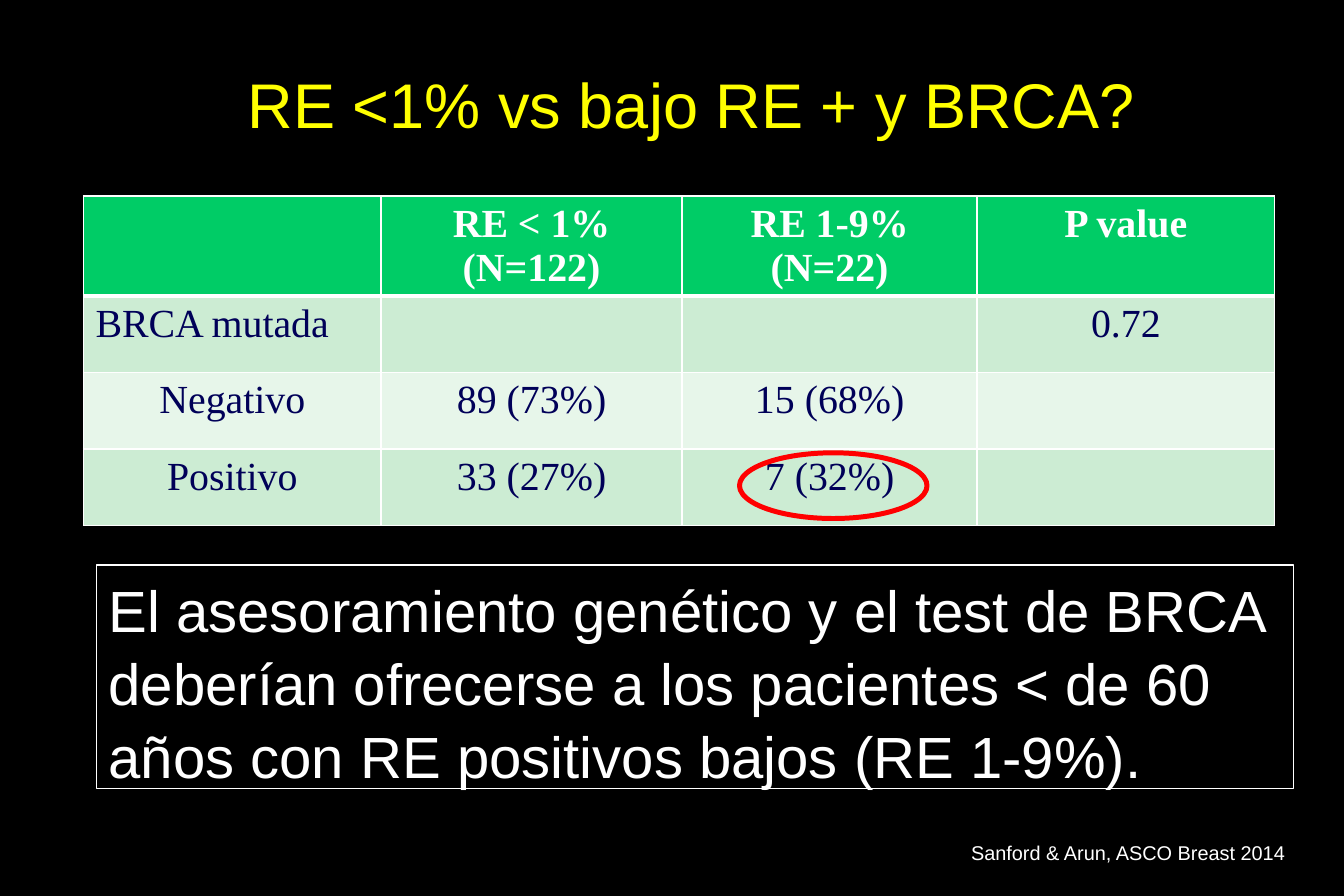
from dataclasses import dataclass

from lxml.etree import SubElement
from pptx import Presentation
from pptx.dml.color import RGBColor
from pptx.enum.shapes import MSO_SHAPE
from pptx.enum.text import MSO_ANCHOR, MSO_AUTO_SIZE, PP_ALIGN
from pptx.oxml import parse_xml
from pptx.oxml.ns import nsdecls, qn
from pptx.slide import Slide
from pptx.table import _Cell
from pptx.text.text import TextFrame
from pptx.util import Inches, Pt

COLOURS = {
    "background": "000000",
    "title": "FFFF00",
    "white": "FFFFFF",
    "header": "00CC66",
    "odd row": "CCECD3",
    "even row": "E7F6EA",
    "table text": "000058",
    "highlight": "FF0000",
}
COLUMN_WIDTHS = (2.49, 2.52, 2.47, 2.49)
ROW_HEIGHT = 0.64
TABLE_ROWS = (
    ("", "RE < 1%\n(N=122)", "RE 1-9%\n(N=22)", "P value"),
    ("BRCA mutada", "", "", "0.72"),
    ("Negativo", "89 (73%)", "15 (68%)", ""),
    ("Positivo", "33 (27%)", "7 (32%)", ""),
)


@dataclass(frozen=True)
class Style:
    """Describe the look of a piece of text."""

    size: float
    colour: str = "white"
    font: str = "Arial"
    bold: bool = False
    align: PP_ALIGN = PP_ALIGN.LEFT
    spacing: float = 1.0


@dataclass(frozen=True)
class Note:
    """Describe a text box and its place in inches."""

    place: tuple[float, float, float, float]
    text: str
    style: Style
    wrap: bool
    outlined: bool


NOTES = (
    Note((8.03, 6.99, 2.95, 0.3), "Sanford & Arun, ASCO Breast 2014",
         Style(12), wrap=False, outlined=False),
    Note((0.81, 4.73, 10.02, 1.87),
         "El asesoramiento genético y el test de BRCA deberían ofrecerse a los "
         "pacientes < de 60 años con RE positivos bajos (RE 1-9%).",
         Style(35, spacing=1.05), wrap=True, outlined=True),
)


def colour(name: str) -> RGBColor:
    """Return the named colour."""
    return RGBColor.from_string(COLOURS[name])


def write(frame: TextFrame, text: str, style: Style) -> None:
    """Write each line of the text as a styled paragraph."""
    for index, line in enumerate(text.split("\n")):
        para = frame.add_paragraph() if index else frame.paragraphs[0]
        para.alignment = style.align
        para.line_spacing = style.spacing
        span = para.add_run()
        span.text = line
        span.font.size = Pt(style.size)
        span.font.name = style.font
        span.font.bold = style.bold
        span.font.color.rgb = colour(style.colour)


def add_borders(cell: _Cell, bottom: float, top: float) -> None:
    """Give the cell white borders, with its own top and bottom widths."""
    properties = cell._tc.get_or_add_tcPr()
    sides = {"lnL": 1, "lnR": 1, "lnT": top, "lnB": bottom}
    for index, (side, width) in enumerate(sides.items()):
        border = parse_xml(f'<a:{side} {nsdecls("a")} w="{Pt(width)}"/>')
        fill = SubElement(border, qn("a:solidFill"))
        SubElement(fill, qn("a:srgbClr"), val=COLOURS["white"])
        properties.insert(index, border)


def add_title(page: Slide) -> None:
    """Place and fill the title placeholder."""
    title = page.shapes.title
    title.left, title.top = Inches(0.7), Inches(0)
    title.width, title.height = Inches(10.18), Inches(1.25)
    frame = title.text_frame
    frame.auto_size = MSO_AUTO_SIZE.NONE
    frame.vertical_anchor = MSO_ANCHOR.BOTTOM
    write(frame, "RE <1% vs bajo RE + y BRCA?",
          Style(38, "title", align=PP_ALIGN.CENTER, spacing=0.95))


def add_results(page: Slide) -> None:
    """Draw the table of BRCA results by receptor level."""
    table = page.shapes.add_table(
        len(TABLE_ROWS), len(COLUMN_WIDTHS), Inches(0.7), Inches(1.64),
        Inches(sum(COLUMN_WIDTHS)), Inches(ROW_HEIGHT * len(TABLE_ROWS))).table
    for column, width in zip(table.columns, COLUMN_WIDTHS):
        column.width = Inches(width)
    for row, texts in enumerate(TABLE_ROWS):
        table.rows[row].height = Inches(ROW_HEIGHT)
        header = row == 0
        band = "header" if header else "odd row" if row % 2 else "even row"
        for column, text in enumerate(texts):
            cell = table.cell(row, column)
            cell.fill.solid()
            cell.fill.fore_color.rgb = colour(band)
            add_borders(cell, bottom=3 if header else 1, top=3 if row == 1 else 1)
            if text:
                left = row == 1 and column == 0
                write(cell.text_frame, text,
                      Style(24, "white" if header else "table text",
                            "Times New Roman", header,
                            PP_ALIGN.LEFT if left else PP_ALIGN.CENTER))


def add_note(page: Slide, note: Note) -> None:
    """Draw a text box, outlined if asked."""
    box = page.shapes.add_textbox(*map(Inches, note.place))
    box.text_frame.word_wrap = note.wrap
    box.text_frame.auto_size = MSO_AUTO_SIZE.SHAPE_TO_FIT_TEXT
    if note.outlined:
        box.line.color.rgb = colour("white")
        box.line.width = Pt(0.75)
    write(box.text_frame, note.text, note.style)


def add_highlight(page: Slide) -> None:
    """Circle the positive result of the low receptor group."""
    ring = page.shapes.add_shape(
        MSO_SHAPE.OVAL, Inches(6.19), Inches(3.79), Inches(1.57), Inches(0.55))
    ring.shadow.inherit = False
    ring.fill.background()
    ring.line.color.rgb = colour("highlight")
    ring.line.width = Pt(3)


def main() -> None:
    """Build the slide and save it."""
    deck = Presentation()
    deck.slide_width, deck.slide_height = Inches(11.25), Inches(7.5)
    page = deck.slides.add_slide(deck.slide_layouts.get_by_name("Title Only"))
    page.background.fill.solid()
    page.background.fill.fore_color.rgb = colour("background")
    add_title(page)
    add_results(page)
    for note in NOTES:
        add_note(page, note)
    add_highlight(page)
    deck.save("out.pptx")


if __name__ == "__main__":
    main()
